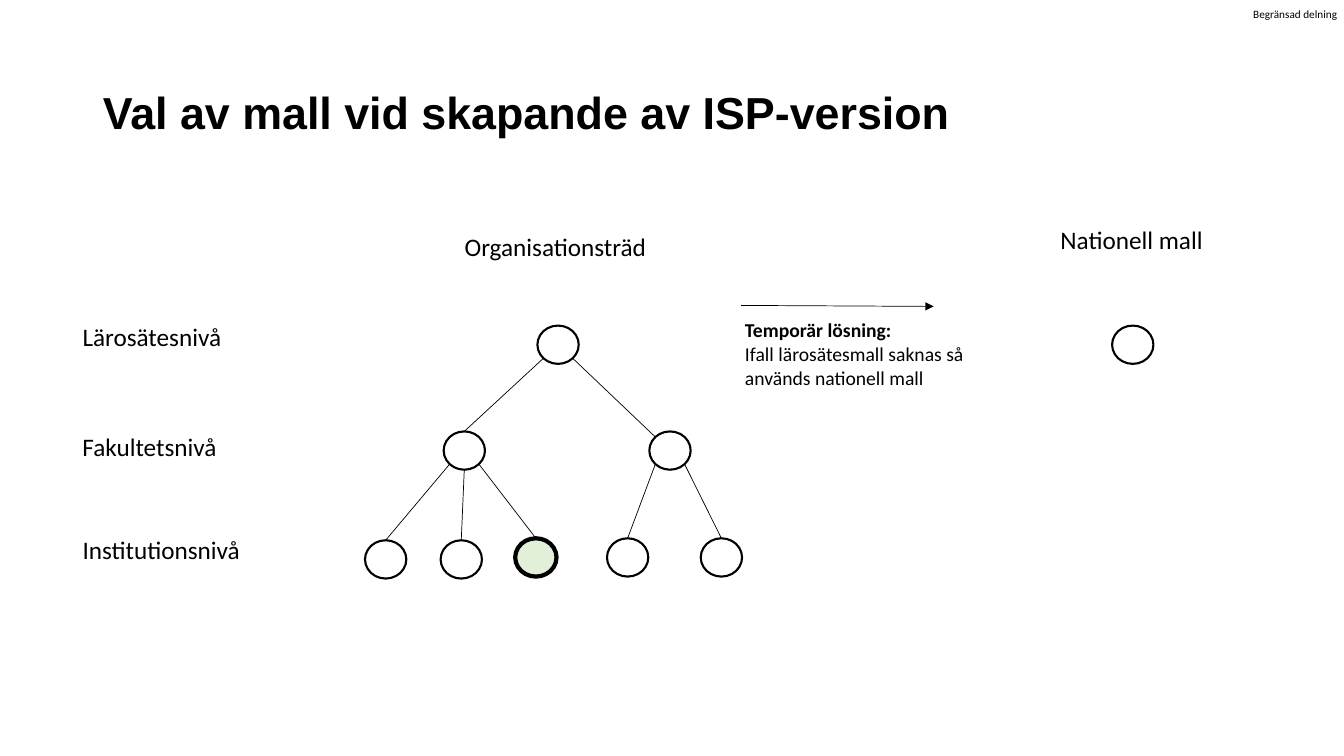
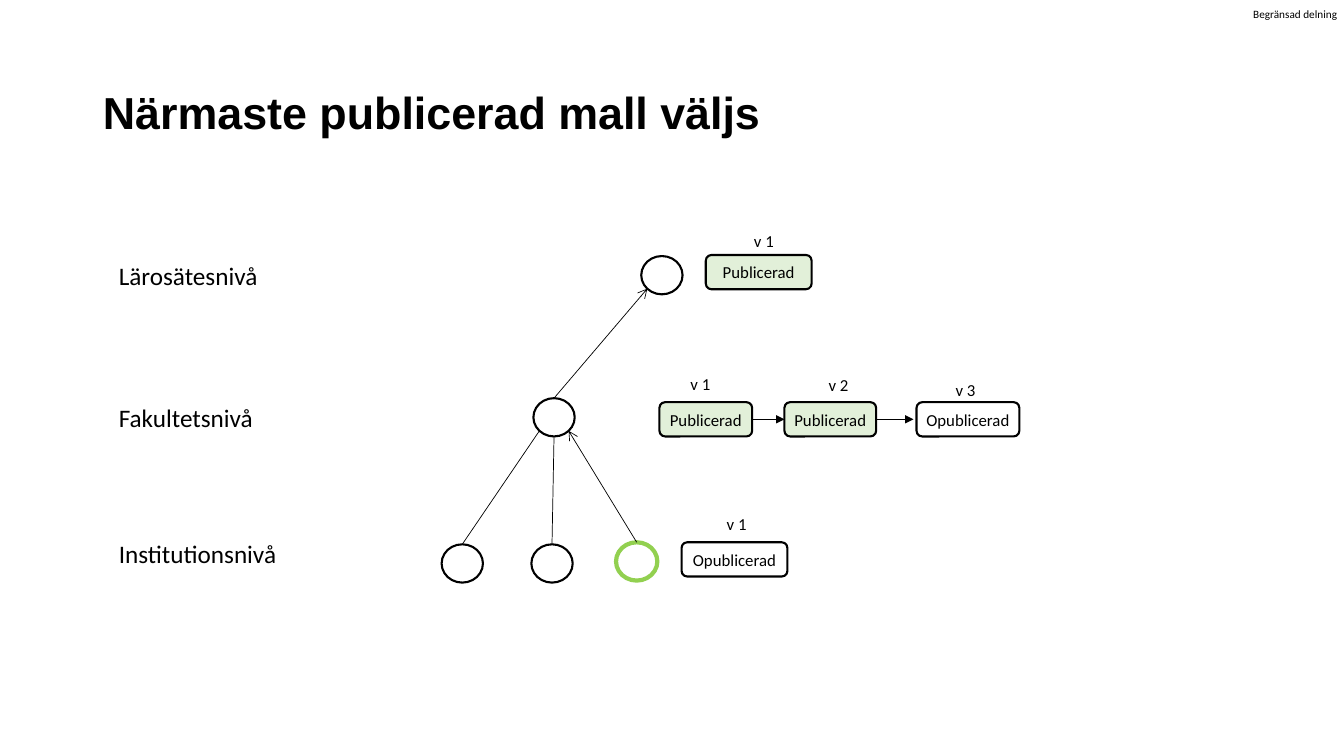
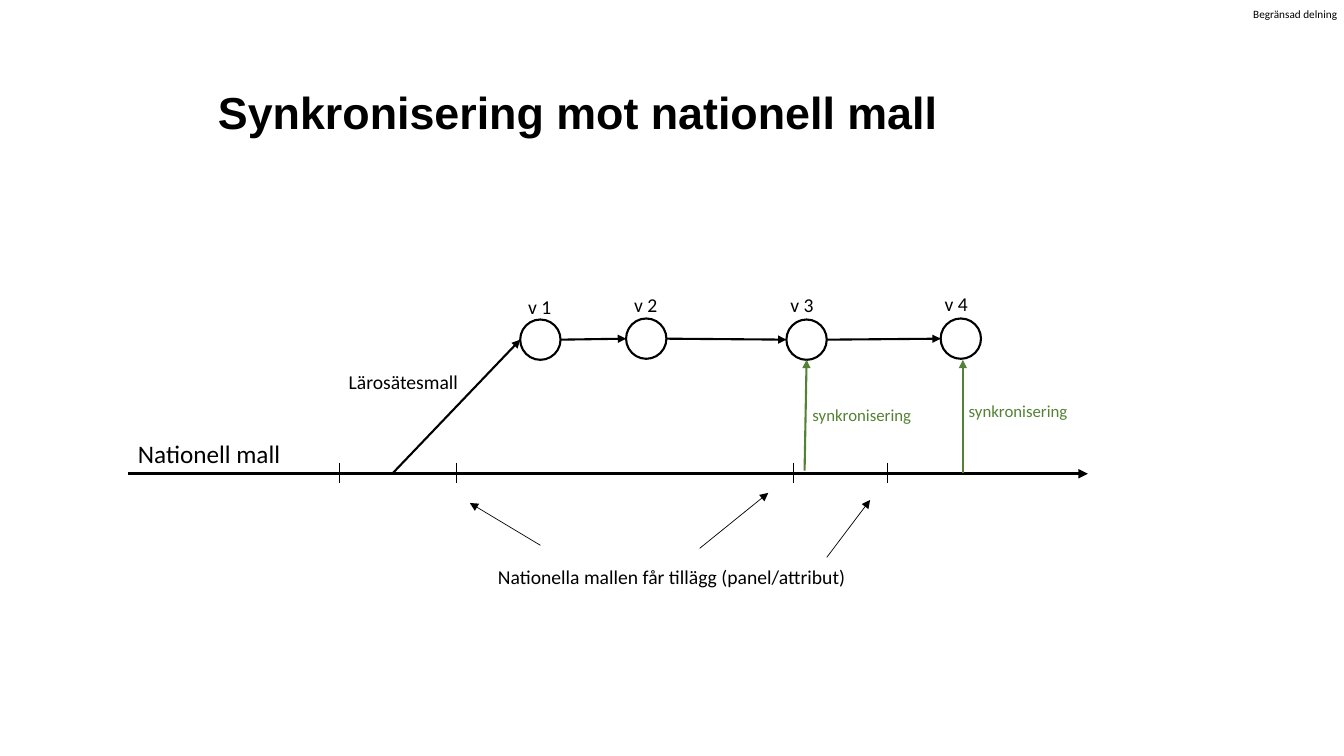
from itertools import pairwise
from math import cos, radians, sin

from lxml import etree
from pptx import Presentation
from pptx.dml.color import RGBColor
from pptx.enum.shapes import MSO_CONNECTOR, MSO_SHAPE
from pptx.enum.text import MSO_ANCHOR, MSO_AUTO_SIZE, PP_ALIGN
from pptx.oxml.ns import qn
from pptx.util import Inches, Pt

ELLIPSE = MSO_SHAPE.OVAL
ROUNDED = MSO_SHAPE.ROUNDED_RECTANGLE
STRAIGHT = MSO_CONNECTOR.STRAIGHT
LEFT, CENTER = PP_ALIGN.LEFT, PP_ALIGN.CENTER
MIDDLE = MSO_ANCHOR.MIDDLE
GROW, FIXED = MSO_AUTO_SIZE.SHAPE_TO_FIT_TEXT, MSO_AUTO_SIZE.NONE

COLORS = {
    "black": "000000",
    "pale": "E2F0D9",
    "lime": "92D050",
    "green": "548235",
}
TITLE_FONT, BODY_FONT = "Arial", "Calibri"
LABEL_HEIGHT = {8: 0.13, 12: 0.3, 14: 0.34, 18: 0.4}
NODE_SIZE = (0.41, 0.38)
VERSION_SIZE = (0.4, 0.4)
# Compass points on an ellipse, in degrees clockwise from east
ANGLES = {"e": 0, "se": 45, "s": 90, "sw": 135, "w": 180, "nw": 225, "n": 270}
LEVELS = [("Lärosätesnivå", 1.59), ("Fakultetsnivå", 1.54),
          ("Institutionsnivå", 1.78)]


def rgb(name):
    return RGBColor.from_string(COLORS[name])


def add_run(p, text, size, font=BODY_FONT, bold=False, color="black"):
    r = p.add_run()
    r.text = text
    r.font.name, r.font.size, r.font.bold = font, Pt(size), bold
    r.font.color.rgb = rgb(color)


def set_margins(tf, margin):
    tf.margin_left = tf.margin_right = Inches(margin)
    tf.margin_top = tf.margin_bottom = Inches(margin)


def add_label(s, lines, x, y, w, size, color="black", wrap=False):
    """Text box; lines is a string or a list of (text, bold)."""
    if isinstance(lines, str):
        lines = [(lines, False)]
    box = s.shapes.add_textbox(Inches(x), Inches(y), Inches(w),
                               Inches(LABEL_HEIGHT[size]))
    tf = box.text_frame
    tf.word_wrap, tf.auto_size = wrap, GROW
    p = tf.paragraphs[0]
    for i, (text, bold) in enumerate(lines):
        if i:
            p.add_line_break()
        add_run(p, text, size, bold=bold, color=color)
    return box


def add_outline(s, kind, x, y, size, fill=None, line="black", width=1.5):
    shape = s.shapes.add_shape(kind, Inches(x), Inches(y),
                               *(Inches(v) for v in size))
    shape.shadow.inherit = False
    if fill:
        shape.fill.solid()
        shape.fill.fore_color.rgb = rgb(fill)
    else:
        shape.fill.background()
    shape.line.color.rgb = rgb(line)
    shape.line.width = Pt(width)
    return shape


def add_line(s, start, end, width=0.5, color="black", head=None):
    cx = s.shapes.add_connector(STRAIGHT, *(Inches(v) for v in start + end))
    cx.line.color.rgb = rgb(color)
    cx.line.width = Pt(width)
    if head:
        etree.SubElement(cx.line._get_or_add_ln(), qn("a:tailEnd"), type=head)
    etree.SubElement(cx._element.spPr, qn("a:effectLst"))


def site(corner, size, point):
    """Position of a compass point on an ellipse."""
    angle = radians(ANGLES[point])
    return (corner[0] + size[0] / 2 * (1 + cos(angle)),
            corner[1] + size[1] / 2 * (1 + sin(angle)))


def add_tree(s, nodes, edges, styles):
    """Circles by name, and edges as (child, point, parent, point, head)."""
    for name, corner in nodes.items():
        add_outline(s, ELLIPSE, *corner, NODE_SIZE, **styles.get(name, {}))
    for child, child_point, parent, parent_point, head in edges:
        add_line(s, site(nodes[child], NODE_SIZE, child_point),
                 site(nodes[parent], NODE_SIZE, parent_point), head=head)


def add_levels(s, x, tops):
    for (text, w), y in zip(LEVELS, tops):
        add_label(s, text, x, y, w, 18)


def add_status(s, x, y, w, published, version, label_x, label_y):
    """Status box of one template version, with its number above."""
    box = add_outline(s, ROUNDED, x, y, (w, 0.34),
                      fill="pale" if published else None)
    tf = box.text_frame
    set_margins(tf, 0)
    tf.word_wrap, tf.vertical_anchor = False, MIDDLE
    p = tf.paragraphs[0]
    p.alignment = CENTER
    add_run(p, "Publicerad" if published else "Opublicerad", 12)
    add_label(s, f"v {version}", label_x, label_y, 0.4, 12)


def new_slide(prs, title, align=LEFT):
    s = prs.slides.add_slide(prs.slide_layouts[5])
    sp = s.shapes.title
    sp.left, sp.top = Inches(0.92), Inches(0.74)
    sp.width, sp.height = Inches(9.63), Inches(0.8)
    tf = sp.text_frame
    tf.word_wrap, tf.auto_size, tf.vertical_anchor = True, FIXED, MIDDLE
    p = tf.paragraphs[0]
    p.alignment, p.line_spacing = align, 0.9
    add_run(p, title, 32, TITLE_FONT, bold=True)
    # Sharing mark in the corner
    mark = add_label(s, "Begränsad delning", 12.43, 0.07, 0.86, 8)
    set_margins(mark.text_frame, 0)
    return s


def build_choice(prs):
    s = new_slide(prs, "Val av mall vid skapande av ISP-version")
    # Organisation tree
    nodes = {
        "inst1": (3.62, 5.36), "inst2": (4.37, 5.36), "inst3": (5.11, 5.34),
        "inst4": (6.02, 5.34), "inst5": (6.95, 5.34),
        "fac1": (4.4, 4.28), "fac2": (6.44, 4.28), "root": (5.33, 3.23),
        "national": (11.03, 3.23),
    }
    edges = [
        ("inst1", "n", "fac1", "sw", None),
        ("inst2", "n", "fac1", "s", None),
        ("inst3", "n", "fac1", "se", None),
        ("inst4", "n", "fac2", "sw", None),
        ("inst5", "n", "fac2", "se", None),
        ("fac1", "n", "root", "sw", None),
        ("fac2", "nw", "root", "se", None),
    ]
    add_tree(s, nodes, edges, {"inst3": {"fill": "pale", "width": 3}})
    add_levels(s, 0.72, (3.14, 4.23, 5.25))
    add_label(s, "Organisationsträd", 4.51, 2.25, 2.02, 18)
    # Fallback to the national template
    add_label(s, "Nationell mall", 10.42, 2.18, 1.63, 18)
    add_line(s, (7.35, 3.03), (9.26, 3.04), head="triangle")
    add_label(s, [("Temporär lösning:", True),
                  ("Ifall lärosätesmall saknas så", False),
                  ("används nationell mall", False)], 7.29, 3.11, 2.39, 14)


def build_nearest(prs):
    s = new_slide(prs, "Närmaste publicerad mall väljs")
    # Search path up the tree
    nodes = {
        "inst1": (4.38, 5.4), "inst2": (5.27, 5.4), "inst3": (6.11, 5.38),
        "fac": (5.29, 3.95), "root": (6.36, 2.54),
    }
    edges = [
        ("inst1", "n", "fac", "sw", None),
        ("inst2", "n", "fac", "s", None),
        ("inst3", "n", "fac", "se", "arrow"),
        ("fac", "n", "root", "sw", "arrow"),
    ]
    add_tree(s, nodes, edges, {"inst3": {"line": "lime", "width": 3}})
    add_levels(s, 1.08, (2.53, 3.94, 5.29))
    # Template versions at each level
    for status in [
        (7, 2.53, 1.05, True, 1, 7.38, 2.24),
        (6.54, 3.99, 0.92, True, 1, 6.75, 3.66),
        (7.78, 3.99, 0.91, True, 2, 8.12, 3.67),
        (9.09, 3.99, 1.02, False, 3, 9.38, 3.72),
        (6.76, 5.38, 1.05, False, 1, 7.11, 5.05),
    ]:
        add_status(s, *status)
    for start, end in [(7.46, 7.78), (8.69, 9.06)]:
        add_line(s, (start, 4.16), (end, 4.16), head="triangle")


def build_sync(prs):
    s = new_slide(prs, "Synkronisering mot nationell mall", CENTER)
    # Timeline of the national template
    add_line(s, (1.27, 4.7), (10.79, 4.7), 2.25, head="triangle")
    add_label(s, "Nationell mall", 1.27, 4.3, 1.63, 18)
    for x in (3.37, 4.53, 7.87, 8.8):
        add_line(s, (x, 4.59), (x, 4.79), 1)
    # Versions of the university template
    versions = [(5.16, 3.17), (6.21, 3.16), (7.8, 3.17), (9.33, 3.16)]
    labels = [(5.14, 2.88), (6.19, 2.86), (7.74, 2.86), (9.27, 2.85)]
    for number, (corner, place) in enumerate(zip(versions, labels), 1):
        add_outline(s, ELLIPSE, *corner, VERSION_SIZE)
        add_label(s, f"v {number}", *place, 0.44, 14)
    for a, b in pairwise(versions):
        add_line(s, site(a, VERSION_SIZE, "e"), site(b, VERSION_SIZE, "w"),
                 1.5, head="triangle")
    add_line(s, (3.89, 4.7), site(versions[0], VERSION_SIZE, "w"), 1.5,
             head="triangle")
    add_label(s, "Lärosätesmall", 3.36, 3.62, 1.3, 14)
    # Synchronisation
    for start, end, place in [((7.98, 4.67), (8, 3.57), (7.96, 3.97)),
                              ((9.55, 4.69), (9.55, 3.57), (9.51, 3.93))]:
        add_line(s, start, end, 1.5, "green", "triangle")
        add_label(s, "synkronisering", *place, 1.2, 12, "green")
    # Additions to the national template
    add_label(s, "Nationella mallen får tillägg (panel/attribut)",
              4.84, 5.56, 4.19, 14, wrap=True)
    for start, end in [((5.36, 5.41), (4.66, 4.99)),
                       ((6.94, 5.44), (7.62, 4.89)),
                       ((8.2, 5.53), (8.63, 4.96))]:
        add_line(s, start, end, head="triangle")


def main():
    prs = Presentation()
    prs.slide_width, prs.slide_height = Inches(13.33), Inches(7.5)
    build_choice(prs)
    build_nearest(prs)
    build_sync(prs)
    prs.save("out.pptx")


if __name__ == "__main__":
    main()
